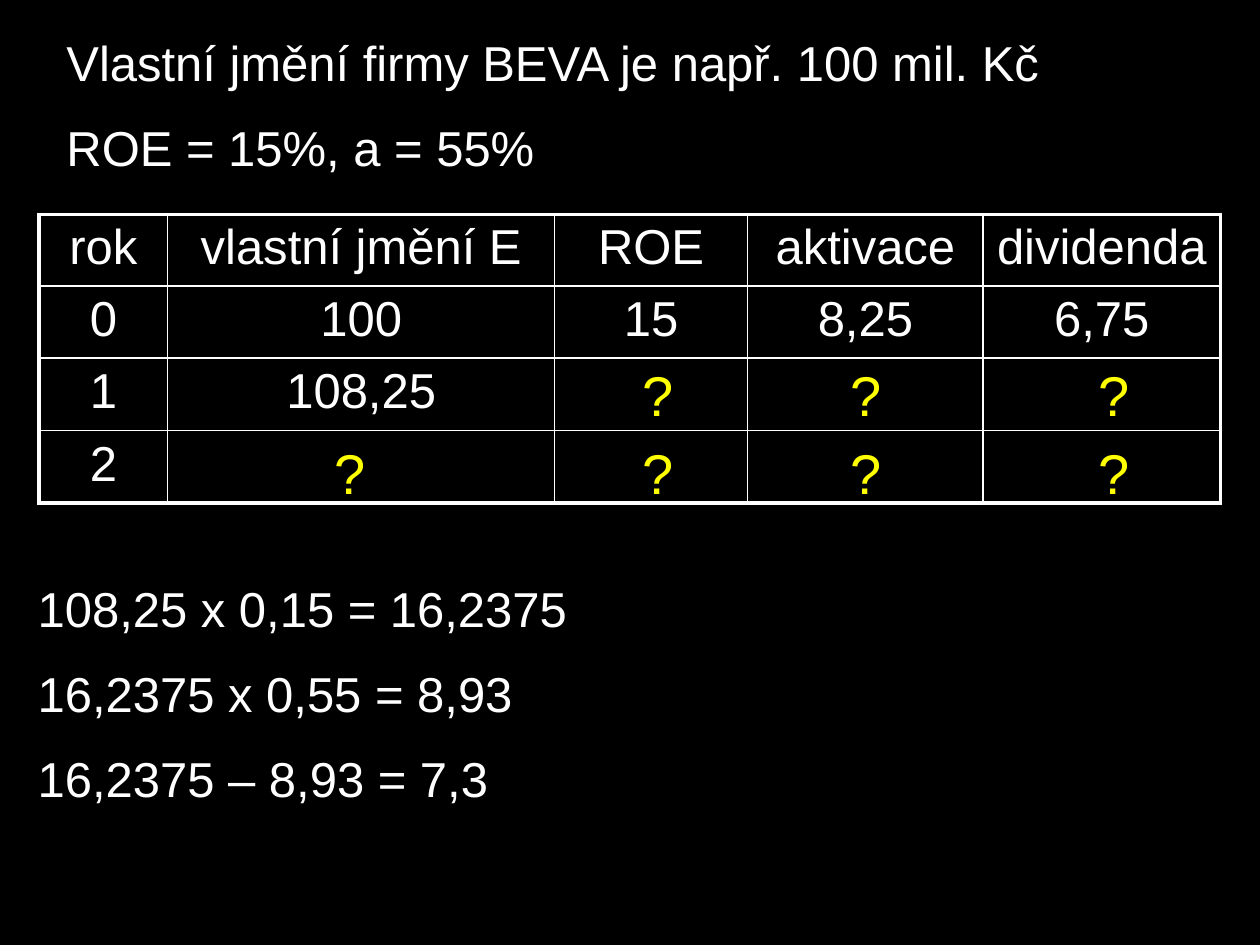
from dataclasses import dataclass
from itertools import product

from lxml.etree import SubElement
from pptx import Presentation
from pptx.dml.color import RGBColor
from pptx.enum.text import PP_ALIGN
from pptx.oxml.ns import qn
from pptx.slide import Slide
from pptx.table import _Cell
from pptx.text.text import _Paragraph
from pptx.util import Cm, Pt

WHITE, GOLD, BLACK = "FFFFFF", "FFFF00", "000000"
THIN, THICK = 1, 2.25


@dataclass
class Note:
    left: float
    top: float
    width: float
    height: float
    lines: tuple[str, ...]
    size: int = 28
    color: str = WHITE


NOTES = [
    Note(1.09, 0.53, 23.22, 3.23,
         ("Vlastní jmění firmy BEVA je např. 100 mil. Kč", "ROE = 15%, a = 55%")),
    Note(0.51, 11.53, 12.19, 5,
         ("108,25 x 0,15 = 16,2375", "16,2375 x 0,55 = 8,93", "16,2375 – 8,93 = 7,3")),
]

# Unknown values: the first row lacks the equity column
MARK_X = (6.5, 12.7, 16.9, 21.9)
MARK_Y = (7.14, 8.71)
MARKS = [Note(x, y, 1, 1.6, ("?",), 32, GOLD)
         for y, x in product(MARK_Y, MARK_X) if (x, y) != (MARK_X[0], MARK_Y[0])]

COLS = (2.59, 7.8, 3.89, 4.75, 4.78)
ROW = 1.45
DATA = (
    ("rok", "vlastní jmění E", "ROE", "aktivace", "dividenda"),
    ("0", "100", "15", "8,25", "6,75"),
    ("1", "108,25", "", "", ""),
    ("2", "", "", "", ""),
)


def tint(code: str) -> RGBColor:
    return RGBColor.from_string(code)


def write(para: _Paragraph, text: str, size: int, color: str) -> None:
    para.font.size = Pt(size)
    if not text:
        return
    run = para.add_run()
    run.text = text
    run.font.name = "Arial"
    run.font.size = Pt(size)
    run.font.color.rgb = tint(color)


def add_note(slide: Slide, note: Note) -> None:
    box = slide.shapes.add_textbox(
        Cm(note.left), Cm(note.top), Cm(note.width), Cm(note.height))
    frame = box.text_frame
    frame.word_wrap = True
    for i, line in enumerate(note.lines):
        para = frame.add_paragraph() if i else frame.paragraphs[0]
        if i:
            para.space_before = Pt(15)
        write(para, line, note.size, note.color)


def set_edge(cell: _Cell, side: str, width: float) -> None:
    props = cell._tc.get_or_add_tcPr()
    line = SubElement(props, qn(f"a:ln{side}"), w=str(Pt(width)))
    fill = SubElement(line, qn("a:solidFill"))
    SubElement(fill, qn("a:srgbClr"), val=WHITE)


def add_grid(slide: Slide) -> None:
    rows, cols = len(DATA), len(COLS)
    grid = slide.shapes.add_table(
        rows, cols, Cm(0.79), Cm(4.32), Cm(sum(COLS)), Cm(ROW * rows)).table
    grid.first_row = grid.horz_banding = False
    for col, width in zip(grid.columns, COLS):
        col.width = Cm(width)
    for row in grid.rows:
        row.height = Cm(ROW)
    for r, c in product(range(rows), range(cols)):
        cell = grid.cell(r, c)
        # Thick frame outside, thin lines inside; edges precede the fill
        outer = {"L": c == 0, "R": c == cols - 1, "T": r == 0, "B": r == rows - 1}
        for side, edge in outer.items():
            set_edge(cell, side, THICK if edge else THIN)
        cell.fill.background()
        para = cell.text_frame.paragraphs[0]
        para.alignment = PP_ALIGN.CENTER
        write(para, DATA[r][c], 28, WHITE)


def main() -> None:
    deck = Presentation()
    deck.slide_width, deck.slide_height = Cm(25.4), Cm(19.05)
    slide = deck.slides.add_slide(deck.slide_layouts[6])
    back = slide.background.fill
    back.solid()
    back.fore_color.rgb = tint(BLACK)

    # Table first, then the texts above it
    add_grid(slide)
    for note in NOTES + MARKS:
        add_note(slide, note)
    deck.save("out.pptx")


if __name__ == "__main__":
    main()
